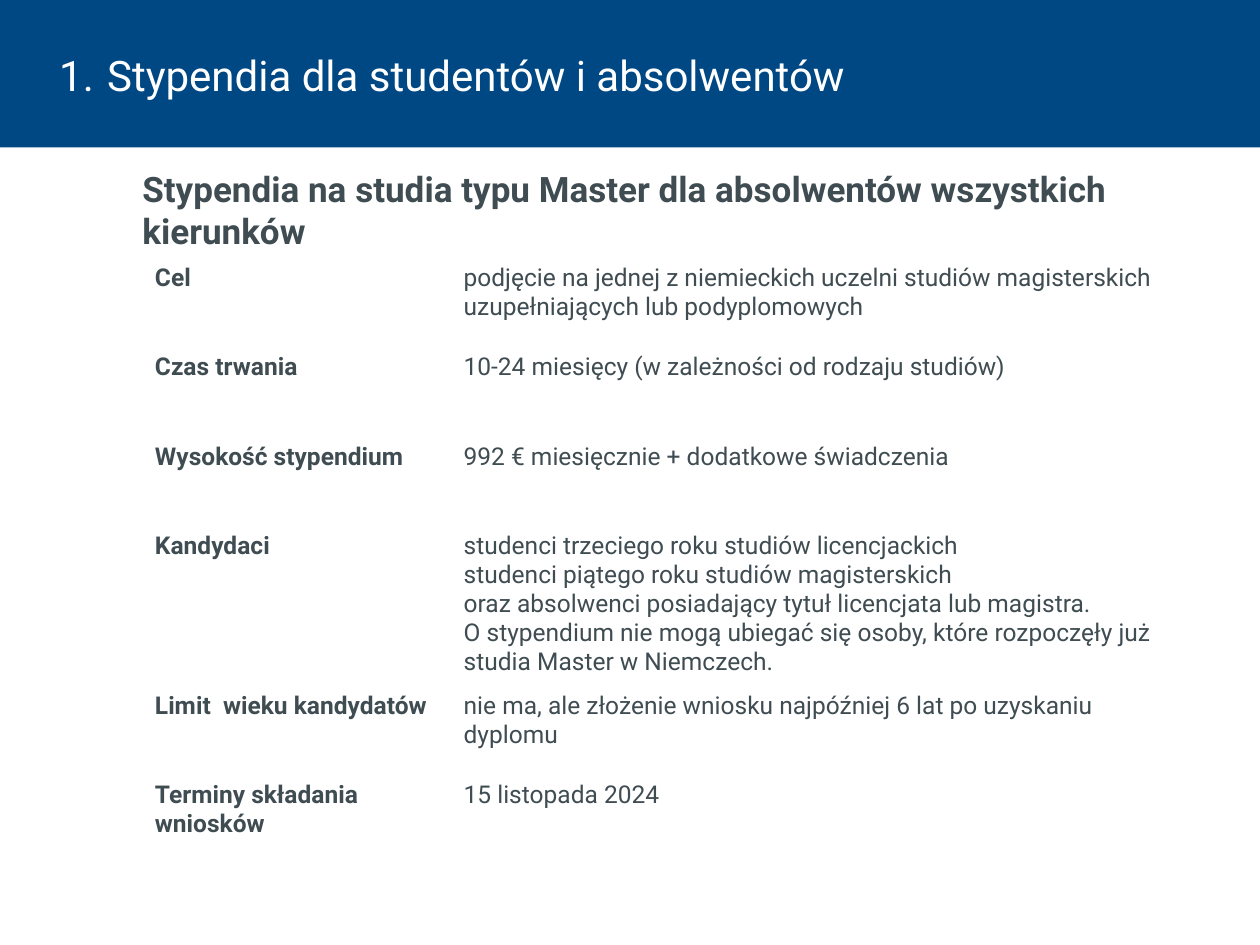
from lxml import etree
from pptx import Presentation
from pptx.dml.color import RGBColor
from pptx.enum import text
from pptx.oxml import ns
from pptx.util import Inches, Pt

COLORS = {"blue": "004883", "white": "FFFFFF", "gray": "3F4C52"}
FONT = "Roboto"
TITLE = "Stypendia dla studentów i absolwentów"
HEADING = ["Stypendia na studia typu Master dla absolwentów wszystkich", "kierunków"]
ROWS = [
    ("Cel", ["podjęcie na jednej z niemieckich uczelni studiów magisterskich "
             "uzupełniających lub podyplomowych"]),
    ("Czas trwania", ["10-24 miesięcy (w zależności od rodzaju studiów)"]),
    ("Wysokość stypendium", ["992 € miesięcznie + dodatkowe świadczenia"]),
    ("Kandydaci", [
        "studenci trzeciego roku studiów licencjackich",
        "studenci piątego roku studiów magisterskich",
        "oraz absolwenci posiadający tytuł licencjata lub magistra.\v"
        "O stypendium nie mogą ubiegać się osoby, które rozpoczęły już "
        "studia Master w Niemczech."]),
    ("Limit  wieku kandydatów", ["nie ma, ale złożenie wniosku najpóźniej 6 lat "
                                 "po uzyskaniu dyplomu"]),
    ("Terminy składania wniosków", ["15 listopada 2024"]),
]
COLUMN_WIDTHS = [2.45, 5.94]
ROW_HEIGHT, TALL_ROW_HEIGHT = 0.71, 1.25
LEFT = 1.13


def color(name):
    return RGBColor.from_string(COLORS[name])


def set_format(target, values):
    for name, value in values.items():
        setattr(target, name, value)


def write(frame, lines, size, ink, bold=False):
    frame.text = "\n".join(lines)
    for para in frame.paragraphs:
        para.alignment = text.PP_ALIGN.LEFT
        for span in para.runs:
            set_format(span.font, {"name": FONT, "size": Pt(size), "bold": bold})
            span.font.color.rgb = color(ink)


def set_margins(frame, left, top, right, bottom):
    set_format(frame, {"margin_left": Inches(left), "margin_top": Inches(top),
                       "margin_right": Inches(right), "margin_bottom": Inches(bottom)})


def add_borders(cell):
    properties = cell._tc.get_or_add_tcPr()
    for position, side in enumerate(("lnL", "lnR", "lnT", "lnB")):
        line = etree.Element(ns.qn(f"a:{side}"), w=str(Pt(1)))
        fill = etree.SubElement(line, ns.qn("a:solidFill"))
        etree.SubElement(fill, ns.qn("a:srgbClr"), val=COLORS["white"])
        properties.insert(position, line)


def add_title(page):
    title = page.shapes.title
    set_format(title, {"left": 0, "top": 0, "width": Inches(10), "height": Inches(1.17)})
    title.fill.solid()
    title.fill.fore_color.rgb = color("blue")
    frame = title.text_frame
    set_format(frame, {"word_wrap": True, "vertical_anchor": text.MSO_ANCHOR.MIDDLE,
                       "auto_size": text.MSO_AUTO_SIZE.NONE})
    set_margins(frame, 0.47, 0.05, 0.1, 0.05)
    write(frame, [TITLE], 24, "white")
    para = frame.paragraphs[0]
    set_format(para, {"line_spacing": Pt(30), "space_before": Pt(0)})
    properties = para._p.get_or_add_pPr()
    properties.set("marL", str(Inches(0.38)))
    properties.set("indent", str(Inches(-0.38)))
    etree.SubElement(properties, ns.qn("a:buFont"), typeface="+mj-lt")
    etree.SubElement(properties, ns.qn("a:buAutoNum"), type="arabicPeriod")


def add_heading(page):
    box = page.shapes.add_textbox(Inches(LEFT), Inches(1.33), Inches(8.42), Inches(0.78))
    box.text_frame.word_wrap = True
    set_margins(box.text_frame, 0, 0, 0, 0)
    write(box.text_frame, HEADING, 20, "gray", bold=True)


def add_details(page):
    heights = [TALL_ROW_HEIGHT if len(lines) > 1 else ROW_HEIGHT for _, lines in ROWS]
    table = page.shapes.add_table(
        len(ROWS), len(COLUMN_WIDTHS), Inches(LEFT), Inches(2.04),
        Inches(sum(COLUMN_WIDTHS)), Inches(sum(heights))).table
    set_format(table, {"first_row": False, "horz_banding": False})
    for column, width in zip(table.columns, COLUMN_WIDTHS):
        column.width = Inches(width)
    for row, height, (label, lines) in zip(table.rows, heights, ROWS):
        row.height = Inches(height)
        for cell, content, bold in zip(row.cells, ([label], lines), (True, False)):
            cell.fill.background()
            add_borders(cell)
            write(cell.text_frame, content, 14, "gray", bold)


def main():
    deck = Presentation()
    set_format(deck, {"slide_width": Inches(10), "slide_height": Inches(7.5)})
    page = deck.slides.add_slide(deck.slide_layouts[5])
    add_title(page)
    add_heading(page)
    add_details(page)
    deck.save("out.pptx")


if __name__ == "__main__":
    main()
